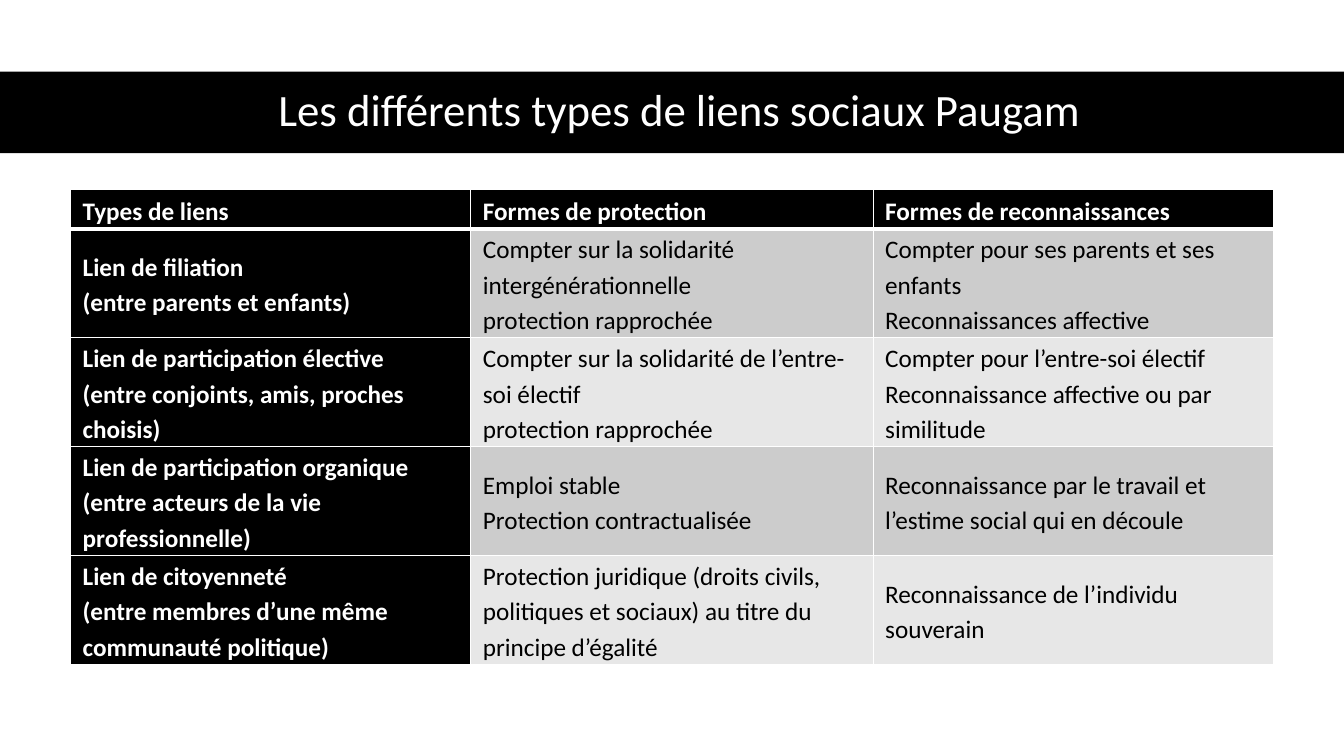
from pptx import Presentation
from pptx.dml.color import RGBColor
from pptx.enum.shapes import MSO_SHAPE
from pptx.enum.text import MSO_ANCHOR, PP_ALIGN
from pptx.oxml import parse_xml
from pptx.oxml.ns import nsdecls
from pptx.util import Inches, Pt

RECTANGLE = MSO_SHAPE.RECTANGLE
MIDDLE = MSO_ANCHOR.MIDDLE
CENTER = PP_ALIGN.CENTER

BLACK = RGBColor(0x00, 0x00, 0x00)
WHITE = RGBColor(0xFF, 0xFF, 0xFF)
DARK_BAND = RGBColor(0xCC, 0xCC, 0xCC)
LIGHT_BAND = RGBColor(0xE7, 0xE7, 0xE7)
FONT = "Calibri"
TITLE_ONLY = 5

COLUMN_WIDTHS = (3.97, 3.99, 3.97)
HEADER_HEIGHT = 0.39
ROW_HEIGHT = 1.08

TITLE = "Les différents types de liens sociaux Paugam"
BONDS = (
    ("Types de liens", "Formes de protection", "Formes de reconnaissances"),
    ("Lien de filiation\n(entre parents et enfants)",
     "Compter sur la solidarité intergénérationnelle\vprotection rapprochée",
     "Compter pour ses parents et ses enfants\vReconnaissances affective"),
    ("Lien de participation élective\n(entre conjoints, amis, proches choisis)",
     "Compter sur la solidarité de l’entre-soi électif\vprotection rapprochée",
     "Compter pour l’entre-soi électif\vReconnaissance affective ou par similitude"),
    ("Lien de participation organique\v(entre acteurs de la vie professionnelle)",
     "Emploi stable\vProtection contractualisée",
     "Reconnaissance par le travail et l’estime social qui en découle"),
    ("Lien de citoyenneté\n(entre membres d’une même communauté politique)",
     "Protection juridique (droits civils, politiques et sociaux) au titre du principe d’égalité",
     "Reconnaissance de l’individu souverain"),
)


def style_text(text_frame, size, color, bold, spacing):
    """Apply one font and line spacing to every paragraph of a text frame."""
    for paragraph in text_frame.paragraphs:
        paragraph.line_spacing = spacing
        paragraph.font.name = FONT
        paragraph.font.size = Pt(size)
        paragraph.font.bold = bold
        paragraph.font.color.rgb = color


def add_borders(cell, widths):
    """Draw white borders of the given point widths, keyed by side tag."""
    properties = cell._tc.get_or_add_tcPr()
    for position, (side, width) in enumerate(widths.items()):
        properties.insert(position, parse_xml(
            f'<a:{side} {nsdecls("a")} w="{Pt(width)}"><a:solidFill>'
            f'<a:srgbClr val="{WHITE}"/></a:solidFill></a:{side}>'))


def add_title_band(slide, left, top, width, height):
    """Place the title placeholder over a full-width black band."""
    band = slide.shapes.add_shape(RECTANGLE, left, top, width, height)
    band.shadow.inherit = False
    band.fill.solid()
    band.fill.fore_color.rgb = BLACK
    band.line.fill.background()

    title = slide.shapes.title
    title.element.addprevious(band.element)
    inset = Inches(0.61)
    title.left, title.top = left + inset, top
    title.width, title.height = Inches(12.26), height
    title.text_frame.text = TITLE
    title.text_frame.vertical_anchor = MIDDLE
    title.text_frame.paragraphs[0].alignment = CENTER
    style_text(title.text_frame, 32, WHITE, False, 0.9)


def fill_cell(cell, text, row, column):
    """Write and format one cell according to its row and column."""
    heading = row == 0 or column == 0
    cell.text = text
    cell.vertical_anchor = MIDDLE
    cell.margin_left = cell.margin_right = Inches(0.12)
    cell.margin_top = cell.margin_bottom = 0
    cell.fill.solid()
    band_color = DARK_BAND if row % 2 else LIGHT_BAND
    cell.fill.fore_color.rgb = BLACK if heading else band_color
    style_text(cell.text_frame, 18, WHITE if heading else BLACK, heading, 1.15)
    add_borders(cell, {"lnL": 1, "lnR": 1, "lnT": 3 if row == 1 else 1,
                       "lnB": 3 if row == 0 else 1})


def add_bond_table(slide, left, top, width, height):
    """Build the table of social bonds in the given box."""
    table = slide.shapes.add_table(
        len(BONDS), len(COLUMN_WIDTHS), left, top, width, height).table
    table.first_row = table.horz_banding = False
    for column, column_width in zip(table.columns, COLUMN_WIDTHS):
        column.width = Inches(column_width)
    for row_index, texts in enumerate(BONDS):
        table.rows[row_index].height = Inches(ROW_HEIGHT if row_index else HEADER_HEIGHT)
        for column_index, text in enumerate(texts):
            fill_cell(table.cell(row_index, column_index), text, row_index, column_index)


def main():
    """Build and save the slide."""
    presentation = Presentation()
    presentation.slide_width = Inches(13.33)
    presentation.slide_height = Inches(7.5)
    slide = presentation.slides.add_slide(presentation.slide_layouts[TITLE_ONLY])
    add_title_band(slide, 0, Inches(0.71), presentation.slide_width, Inches(0.81))
    table_height = HEADER_HEIGHT + ROW_HEIGHT * (len(BONDS) - 1)
    add_bond_table(slide, Inches(0.7), Inches(1.88),
                   Inches(sum(COLUMN_WIDTHS)), Inches(table_height))
    presentation.save("out.pptx")


if __name__ == "__main__":
    main()
